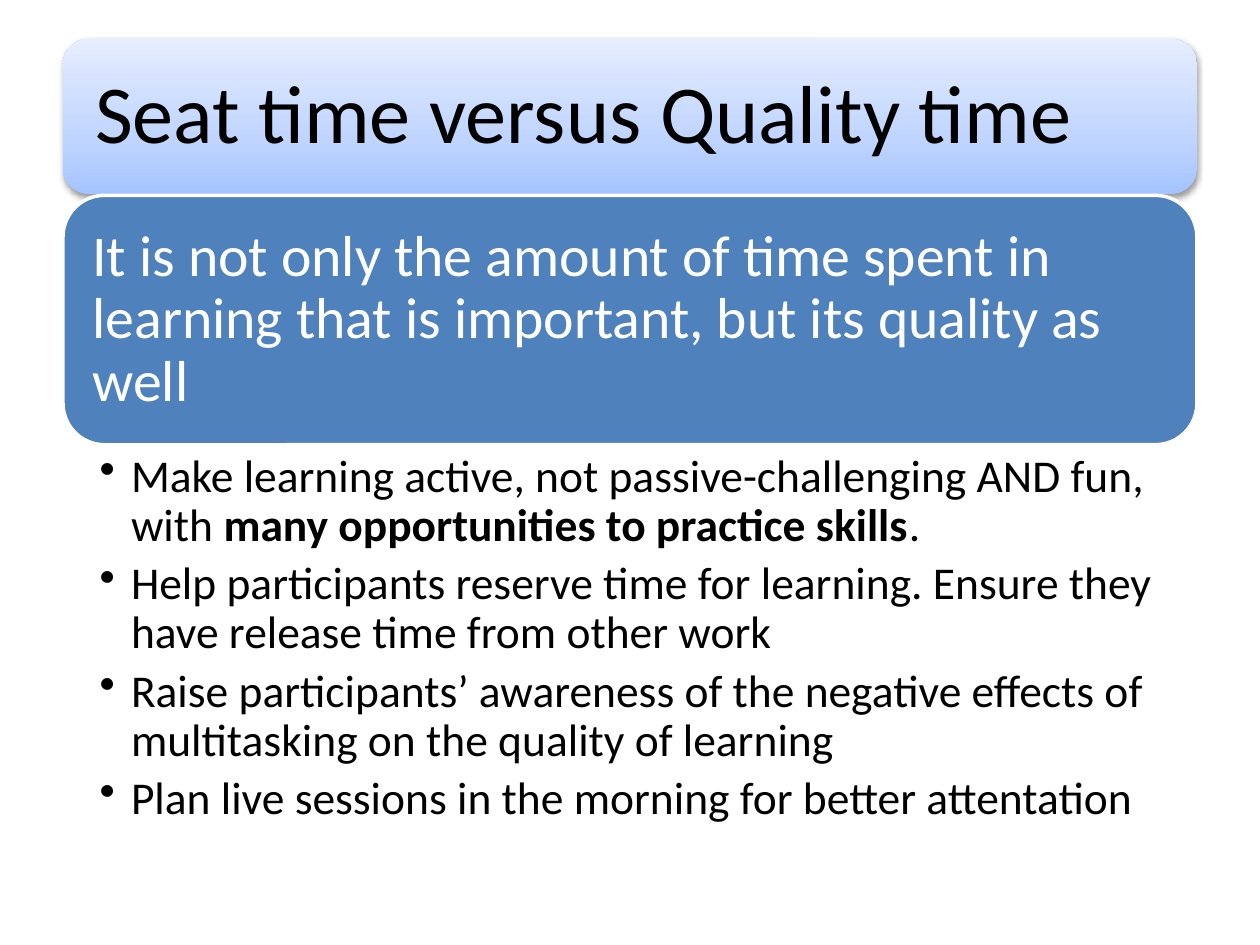
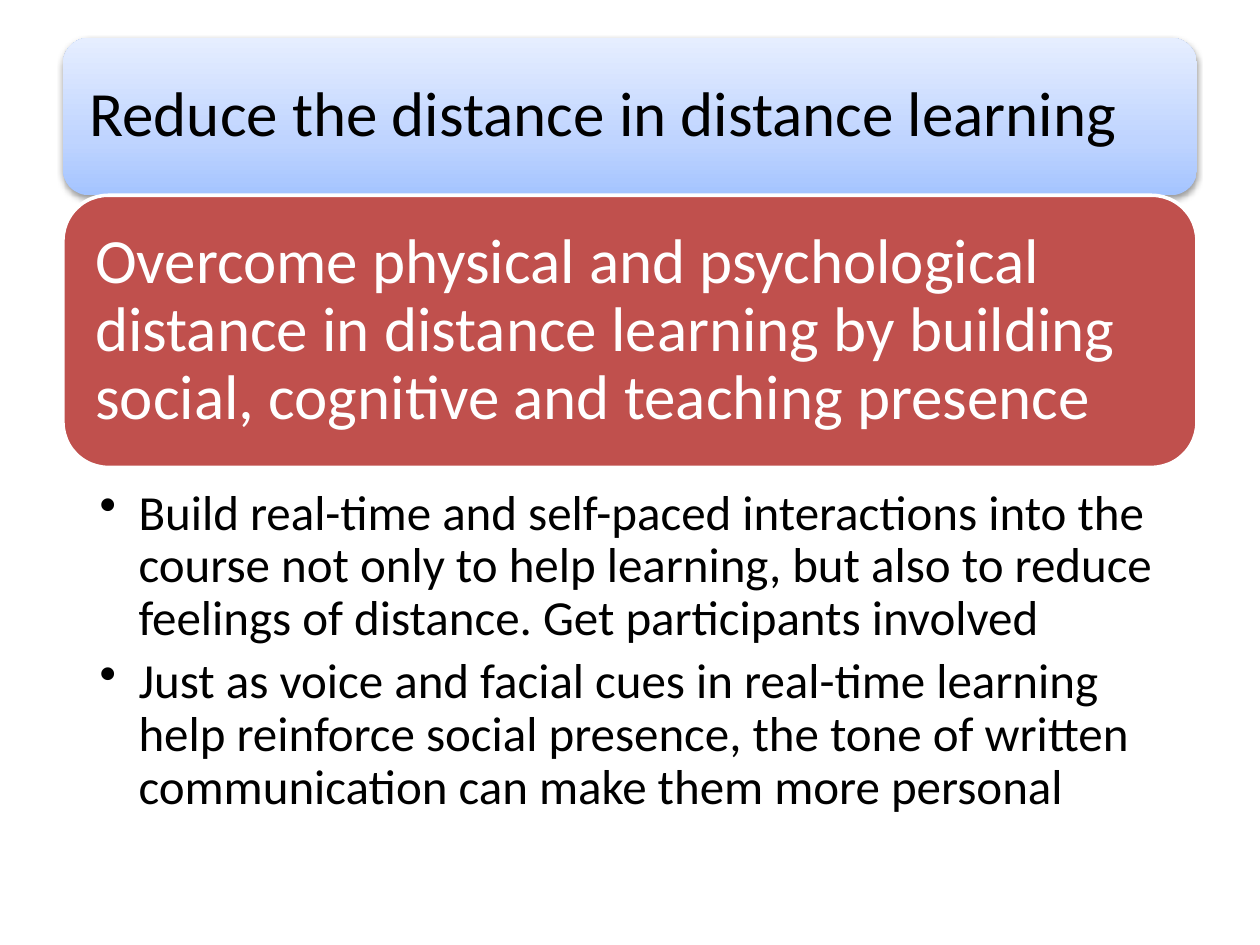
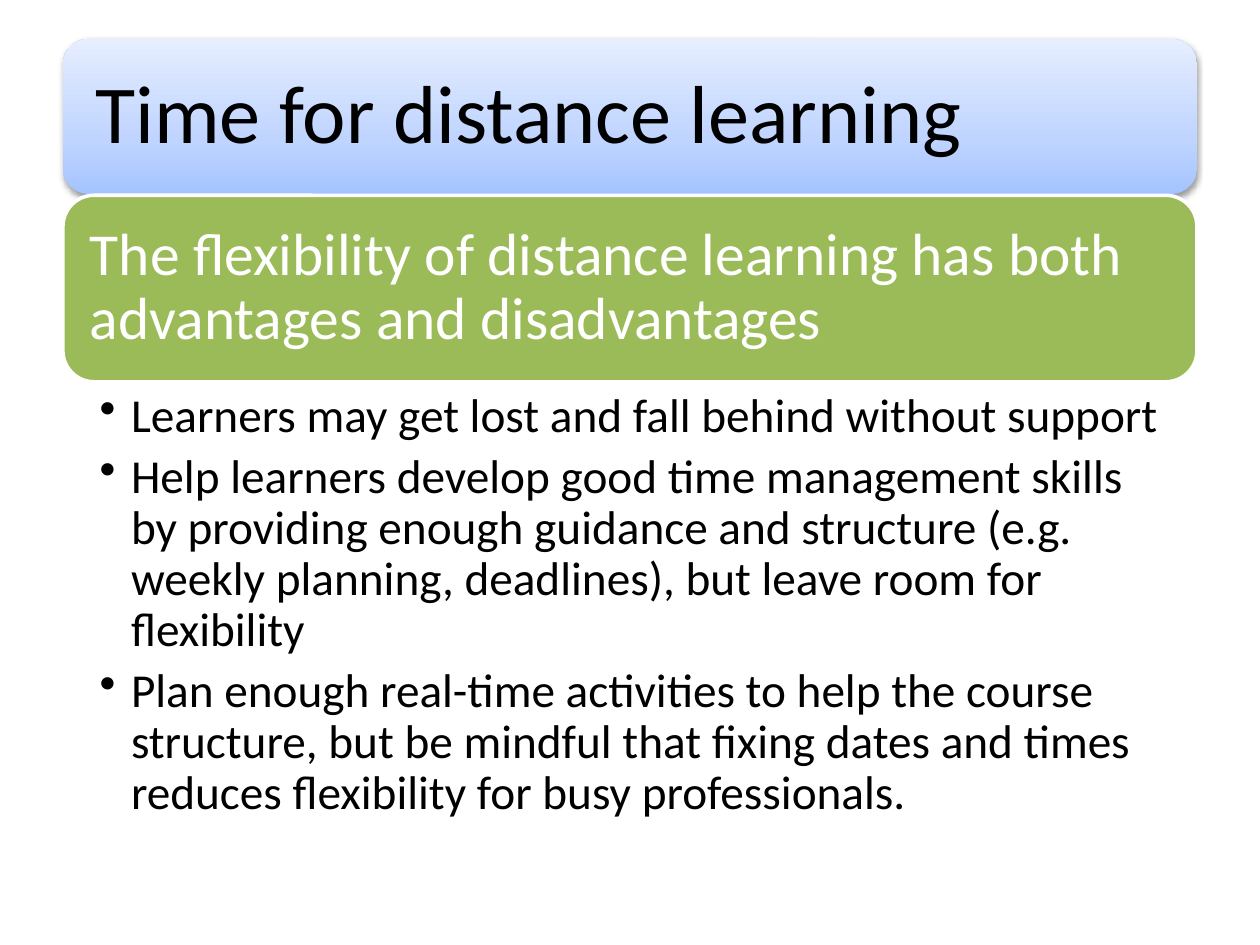
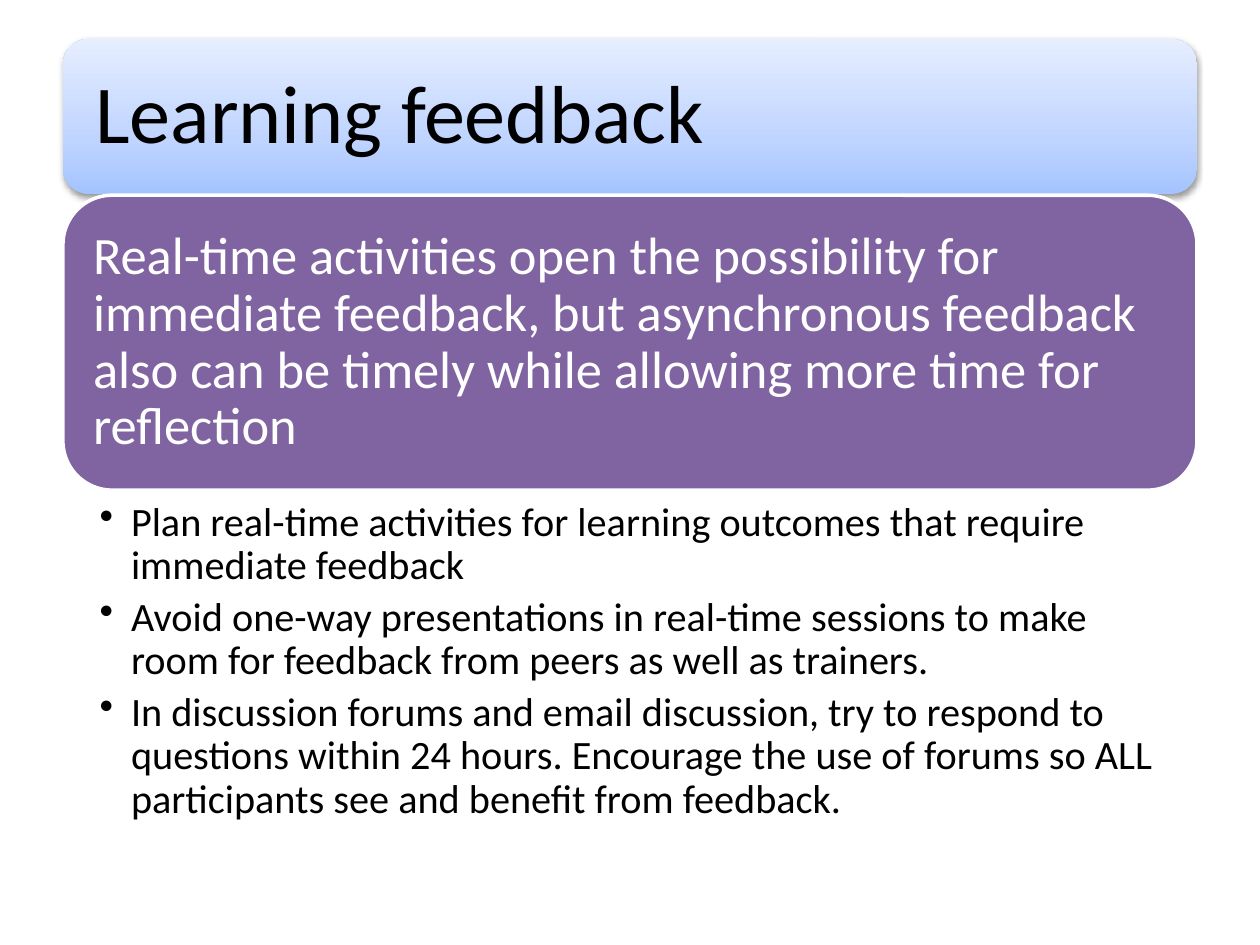
"""Builds four slides on time, distance and feedback in distance learning."""
from copy import deepcopy

from lxml import etree
from pptx import Presentation
from pptx.dml.color import RGBColor
from pptx.enum.shapes import MSO_SHAPE
from pptx.enum.text import MSO_ANCHOR, PP_ALIGN
from pptx.oxml.ns import qn
from pptx.util import Emu, Inches, Pt

ROUNDED = MSO_SHAPE.ROUNDED_RECTANGLE
TOP, MIDDLE = MSO_ANCHOR.TOP, MSO_ANCHOR.MIDDLE
LEFT = PP_ALIGN.LEFT

BLACK = RGBColor(0x00, 0x00, 0x00)
WHITE = RGBColor(0xFF, 0xFF, 0xFF)
BLUE = RGBColor(0x4F, 0x81, 0xBD)
RED = RGBColor(0xC0, 0x50, 0x4D)
GREEN = RGBColor(0x9B, 0xBB, 0x59)
PURPLE = RGBColor(0x80, 0x64, 0xA2)
BAND_STOPS = [
    (0, RGBColor(0xA4, 0xC4, 0xFF)),
    (0.35, RGBColor(0xBF, 0xD4, 0xFF)),
    (1, RGBColor(0xE6, 0xEE, 0xFF)),
]

FONT = "Calibri"
COLUMNS, ROWS = 20, 75
MARGIN, SPAN = 1, 18
MESSAGE_TOP = 15.5
CORNER_INSET = 0.0488

SLIDES = [
    {
        "title": "Seat time versus Quality time",
        "message": "It is not only the amount of time spent in learning that is "
                   "important, but its quality as well",
        "color": BLUE, "message_size": 33, "message_rows": 19.8,
        "points_top": 35.5, "points_rows": 31.4, "points_size": 26,
        "points": [
            "Make learning active, not passive-challenging AND fun, with "
            "*many opportunities to practice skills*.",
            "Help participants reserve time for learning. Ensure they have "
            "release time from other work",
            "Raise participants’ awareness of the negative effects of "
            "multitasking on the quality of learning",
            "Plan live sessions in the morning for better attentation",
        ],
    },
    {
        "title": "Reduce the distance in distance learning",
        "title_size": 36, "title_top": 3, "title_rows": 12.5,
        "message": "Overcome physical and psychological distance in distance "
                   "learning by building social, cognitive and teaching presence",
        "color": RED, "message_size": 36, "message_rows": 21.6,
        "points_top": 38.2, "points_rows": 27.7, "points_size": 28,
        "points_indent": 0.31,
        "points": [
            "Build real-time and self-paced interactions into the course not "
            "only to help learning, but also to reduce feelings of distance. "
            "Get participants involved",
            "Just as voice and facial cues in real-time learning help reinforce "
            "social presence, the tone of written communication can make them "
            "more personal",
        ],
    },
    {
        "title": "Time for distance learning",
        "message": "The flexibility of distance learning has both advantages "
                   "and disadvantages",
        "color": GREEN, "message_size": 34, "message_rows": 14.8,
        "points_top": 30.6, "points_rows": 36.2, "points_size": 27,
        "points": [
            "Learners may get lost and fall behind without support",
            "Help learners develop good time management skills by providing "
            "enough guidance and structure (e.g. weekly planning, deadlines), "
            "but leave room for flexibility",
            "Plan enough real-time activities to help the course structure, but "
            "be mindful that fixing dates and times reduces flexibility for "
            "busy professionals.",
        ],
    },
    {
        "title": "Learning feedback",
        "message": "Real-time activities open the possibility for immediate "
                   "feedback, but asynchronous feedback also can be timely while "
                   "allowing more time for reflection",
        "color": PURPLE, "message_size": 30, "message_rows": 23.4,
        "points_top": 39.4, "points_rows": 27.2, "points_size": 23,
        "points": [
            "Plan real-time activities for learning outcomes that require "
            "immediate feedback",
            "Avoid one-way presentations in real-time sessions to make room for "
            "feedback from peers as well as trainers.",
            "In discussion forums and email discussion, try to respond to "
            "questions within 24 hours. Encourage the use of forums so ALL "
            "participants see and benefit from feedback.",
        ],
    },
]


def apply(target, formats):
    for name, value in formats.items():
        setattr(target, name, value)


class Deck:
    def __init__(self):
        self.prs = Presentation()
        apply(self.prs, {"slide_width": Inches(10), "slide_height": Inches(7.5)})
        self.column = self.prs.slide_width / COLUMNS
        self.row = self.prs.slide_height / ROWS
        self.slide = None

    def new_slide(self):
        self.slide = self.prs.slides.add_slide(self.prs.slide_layouts[6])

    def area(self, top, rows):
        return [Emu(round(length)) for length in (
            MARGIN * self.column, top * self.row, SPAN * self.column, rows * self.row)]

    def panel(self, top, rows):
        panel = self.slide.shapes.add_shape(ROUNDED, *self.area(top, rows))
        panel.shadow.inherit = False
        return panel

    def text(self, box, paragraphs, size, color, margins, anchor=MIDDLE,
             space=0.35, indent=None):
        frame = self.slide.shapes.add_textbox(*box).text_frame
        sides = ("margin_left", "margin_top", "margin_right", "margin_bottom")
        apply(frame, {"word_wrap": True, "vertical_anchor": anchor,
                      **dict(zip(sides, map(Inches, margins)))})
        for index, content in enumerate(paragraphs):
            paragraph = frame.add_paragraph() if index else frame.paragraphs[0]
            if indent:
                self.bullet(paragraph, indent)
            apply(paragraph, {"alignment": LEFT, "line_spacing": 0.9,
                              "space_after": Pt(space * size)})
            for part, words in enumerate(content.split("*")):
                run = paragraph.add_run()
                run.text = words
                apply(run.font, {"name": FONT, "size": Pt(size), "bold": part % 2 == 1})
                run.font.color.rgb = color

    def bullet(self, paragraph, indent):
        paragraph.level = 1
        properties = paragraph._p.get_or_add_pPr()
        properties.set("marL", str(Inches(indent)))
        properties.set("indent", str(-Inches(indent)))
        etree.SubElement(properties, qn("a:buChar"), char="•")

    def panel_text(self, panel, words, size, color):
        inset = round(CORNER_INSET * panel.height)
        box = (panel.left + inset, panel.top + inset,
               panel.width - 2 * inset, panel.height - 2 * inset)
        self.text(box, [words], size, color, [size / 240] * 4)

    def title(self, words, size, top, rows):
        band = self.panel(top, rows)
        band.line.fill.background()
        band.fill.gradient()
        band.fill.gradient_angle = 90
        properties = band._element.spPr
        stops = properties.find(qn("a:gradFill")).find(qn("a:gsLst"))
        stops.append(deepcopy(stops[0]))
        for stop, (position, color) in zip(band.fill.gradient_stops, BAND_STOPS):
            stop.position = position
            stop.color.rgb = color
        shadow = etree.SubElement(
            properties.find(qn("a:effectLst")), qn("a:outerShdw"),
            blurRad=str(Pt(3.1)), dist=str(Pt(1.6)), dir="5400000", rotWithShape="0")
        shade = etree.SubElement(shadow, qn("a:srgbClr"), val=str(BLACK))
        etree.SubElement(shade, qn("a:alpha"), val="38000")
        self.panel_text(band, words, size, BLACK)

    def message(self, words, size, rows, color):
        panel = self.panel(MESSAGE_TOP, rows)
        panel.fill.solid()
        panel.fill.fore_color.rgb = color
        panel.line.color.rgb = WHITE
        panel.line.width = Pt(2)
        self.panel_text(panel, words, size, WHITE)

    def points(self, points, size, top, rows, indent):
        edge = size / 550
        self.text(self.area(top, rows), points, size, BLACK,
                  (0.29, edge, size / 100, edge), TOP, 0.2, indent)


def main():
    deck = Deck()
    for content in SLIDES:
        deck.new_slide()
        deck.title(content["title"], content.get("title_size", 47),
                   content.get("title_top", 3.1), content.get("title_rows", 12.3))
        deck.message(content["message"], content["message_size"],
                     content["message_rows"], content["color"])
        deck.points(content["points"], content["points_size"], content["points_top"],
                    content["points_rows"], content.get("points_indent", 0.25))
    deck.prs.save("out.pptx")


if __name__ == "__main__":
    main()
